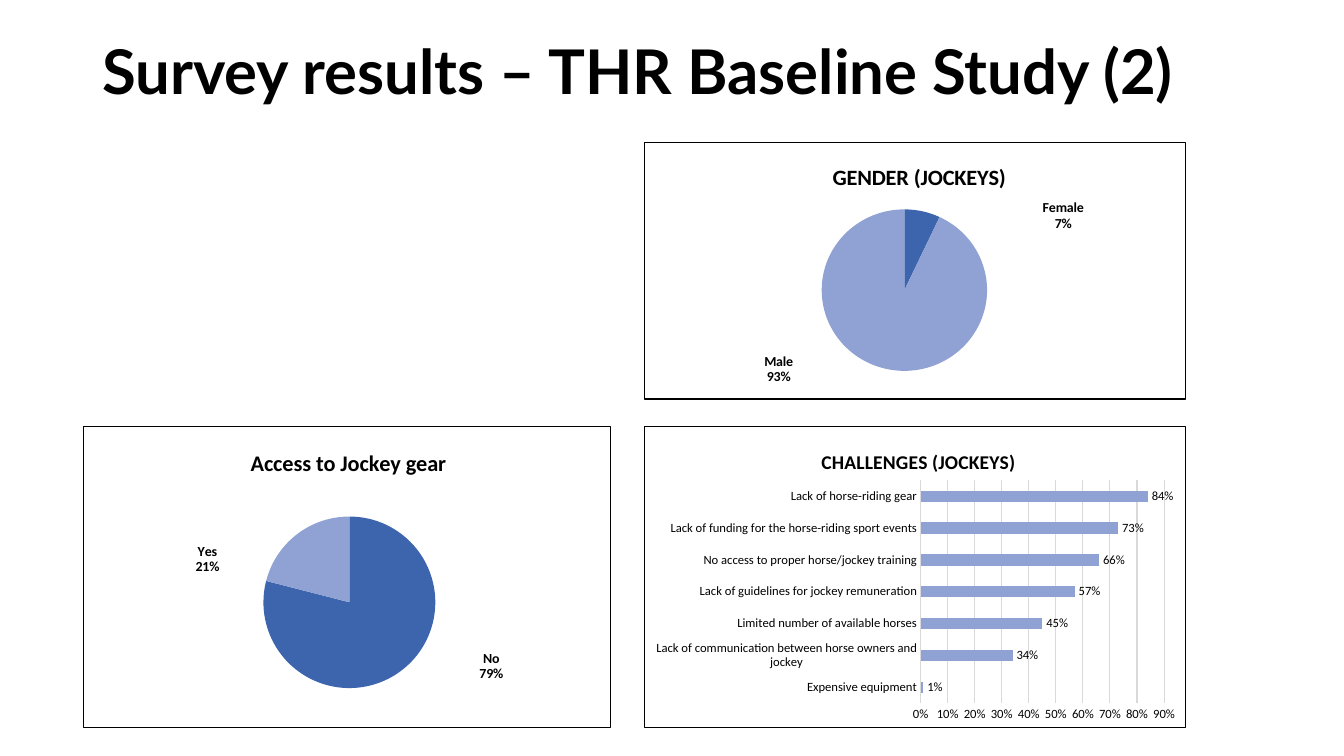
"""Builds the slide of jockey survey results with two pies and a bar chart."""
from lxml import etree
from pptx import Presentation
from pptx.chart.data import CategoryChartData
from pptx.dml.color import RGBColor
from pptx.enum.chart import XL_CHART_TYPE as CT, XL_LABEL_POSITION as LP, XL_TICK_MARK as TM
from pptx.enum.text import MSO_ANCHOR
from pptx.oxml import parse_xml
from pptx.oxml.ns import nsdecls, qn
from pptx.util import Pt

BLACK, WHITE, GRID, DARK, LIGHT = "000000", "FFFFFF", "D9D9D9", "3C65AE", "90A2D3"


def rgb(value):
    return RGBColor.from_string(value)


def set_font(font, color=BLACK, **values):
    for name, value in values.items():
        setattr(font, name, value)
    font.color.rgb = rgb(color)


def set_line(line, color, width):
    line.color.rgb = rgb(color)
    line.width = Pt(width)


def layout(**values):
    parts = "".join(f'<c:{name} val="{value}"/>' for name, value in values.items())
    return f'<c:layout {nsdecls("c")}><c:manualLayout>{parts}</c:manualLayout></c:layout>'


def place(parent, before, **values):
    for old in parent.findall(qn("c:layout")):
        parent.remove(old)
    parent.find(qn(before)).addprevious(parse_xml(layout(**values)))


class Deck:
    def __init__(self):
        self.prs = Presentation()
        self.prs.slide_width, self.prs.slide_height = Pt(960), Pt(540)
        self.s = self.prs.slides.add_slide(self.prs.slide_layouts[6])

    def title(self, text, box):
        tf = self.s.shapes.add_textbox(*map(Pt, box)).text_frame
        tf.word_wrap = True
        tf.vertical_anchor = MSO_ANCHOR.MIDDLE
        p = tf.paragraphs[0]
        p.line_spacing = 0.9
        r = p.add_run()
        r.text = text
        set_font(r.font, name="Lato", size=Pt(44), bold=True)

    def chart(self, kind, box, title, size, title_at, plot_at, data, bold):
        cd = CategoryChartData()
        cd.categories = list(data)
        cd.add_series("Series 1", list(data.values()))
        chart = self.s.shapes.add_chart(kind, *map(Pt, box), cd).chart
        chart.has_legend = False
        set_font(chart.font, name="Calibri", size=Pt(10), bold=bold)
        chart.has_title = True
        tf = chart.chart_title.text_frame
        tf.text = title
        set_font(tf.paragraphs[0].runs[0].font, name="Calibri", size=Pt(size), bold=True)
        x, y = title_at
        place(chart.element.find(".//" + qn("c:title")), "c:overlay",
              xMode="edge", yMode="edge", x=x, y=y)
        x, y, w, h = plot_at
        kind_tag = "c:pieChart" if kind == CT.PIE else "c:barChart"
        place(chart.element.find(".//" + qn("c:plotArea")), kind_tag,
              layoutTarget="inner", xMode="edge", yMode="edge", x=x, y=y, w=w, h=h)
        chart.element.find(qn("c:chart")).addnext(parse_xml(
            f'<c:spPr {nsdecls("c", "a")}><a:solidFill><a:srgbClr val="{WHITE}"/></a:solidFill>'
            f'<a:ln w="{Pt(1)}"><a:solidFill><a:srgbClr val="{BLACK}"/></a:solidFill></a:ln></c:spPr>'))
        return chart

    def pie(self, box, title, title_at, plot_at, data, offsets):
        chart = self.chart(CT.PIE, box, title, 16, title_at, plot_at, data, True)
        plot = chart.plots[0]
        plot.vary_by_categories = True
        series = plot.series[0]
        for i, color in enumerate((DARK, LIGHT)):
            fill = series.points[i].format.fill
            fill.solid()
            fill.fore_color.rgb = rgb(color)
        labels = series.data_labels
        for name, value in dict(show_value=False, show_category_name=True, show_percentage=True,
                                position=LP.OUTSIDE_END).items():
            setattr(labels, name, value)
        set_font(labels.font, name="Calibri", size=Pt(10), bold=True)
        root = chart.element.find(".//" + qn("c:dLbls"))
        for leader in root.findall(qn("c:showLeaderLines")):
            leader.set("val", "0")
        shows = [child for child in root if child.tag.startswith(qn("c:show"))
                 and child.tag != qn("c:showLeaderLines")]
        flags = "".join(etree.tostring(child, encoding="unicode", with_tail=False) for child in shows)
        separator = f'<c:separator {nsdecls("c")}>\n</c:separator>'
        shows[-1].addnext(parse_xml(separator))
        for i, (x, y) in enumerate(offsets):
            root.insert(i, parse_xml(
                f'<c:dLbl {nsdecls("c")}><c:idx val="{i}"/>{layout(x=x, y=y)}'
                f'<c:dLblPos val="outEnd"/>{flags}{separator}</c:dLbl>'))

    def bars(self, box, title, title_at, plot_at, data):
        chart = self.chart(CT.BAR_CLUSTERED, box, title, 14, title_at, plot_at, data, False)
        plot = chart.plots[0]
        plot.gap_width = 182
        plot.vary_by_categories = False
        series = plot.series[0]
        series.format.fill.solid()
        series.format.fill.fore_color.rgb = rgb(LIGHT)
        labels = series.data_labels
        for name, value in dict(show_value=True, position=LP.OUTSIDE_END, number_format="0%",
                                number_format_is_linked=False).items():
            setattr(labels, name, value)
        cat, val = chart.category_axis, chart.value_axis
        for item in (labels, cat.tick_labels, val.tick_labels):
            set_font(item.font, name="Calibri", size=Pt(9), bold=False)
        for axis in (cat, val):
            axis.major_tick_mark = axis.minor_tick_mark = TM.NONE
        cat.has_major_gridlines = False
        set_line(cat.format.line, GRID, 0.75)
        val.minimum_scale, val.maximum_scale, val.major_unit = 0, 0.9, 0.1
        val.has_major_gridlines = True
        set_line(val.major_gridlines.format.line, GRID, 0.75)
        val.format.line.fill.background()
        val.tick_labels.number_format = "0%"
        val.tick_labels.number_format_is_linked = False


def main():
    deck = Deck()
    left, right, top, bottom = 59, 460, 101.5, 304
    deck.title("Survey results – THR Baseline Study (2)", (66, 20, 828, 67))
    deck.pie((right, top, 387.5, 188), "GENDER (JOCKEYS)", (0.34, 0.06), (0.09, 0.26, 0.78, 0.63),
             {"Female": 7, "Male": 93}, [(0.22, 0.1), (-0.17, -0.08)])
    deck.pie((left, bottom, 377.5, 216), "Access to Jockey gear", (0.31, 0.06), (0.34, 0.3, 0.33, 0.57),
             {"No": 79, "Yes": 21}, [(0.14, -0.08), (-0.14, 0.15)])
    deck.bars((right, bottom, 387.5, 216), "CHALLENGES (JOCKEYS)", (0.32, 0.06), (0.51, 0.18, 0.45, 0.74), {
        "Expensive equipment": 0.01,
        "Lack of communication between horse owners and jockey": 0.34,
        "Limited number of available horses": 0.45,
        "Lack of guidelines for jockey remuneration": 0.57,
        "No access to proper horse/jockey training": 0.66,
        "Lack of funding for the horse-riding sport events": 0.73,
        "Lack of horse-riding gear": 0.84,
    })
    deck.prs.save("out.pptx")


if __name__ == "__main__":
    main()
